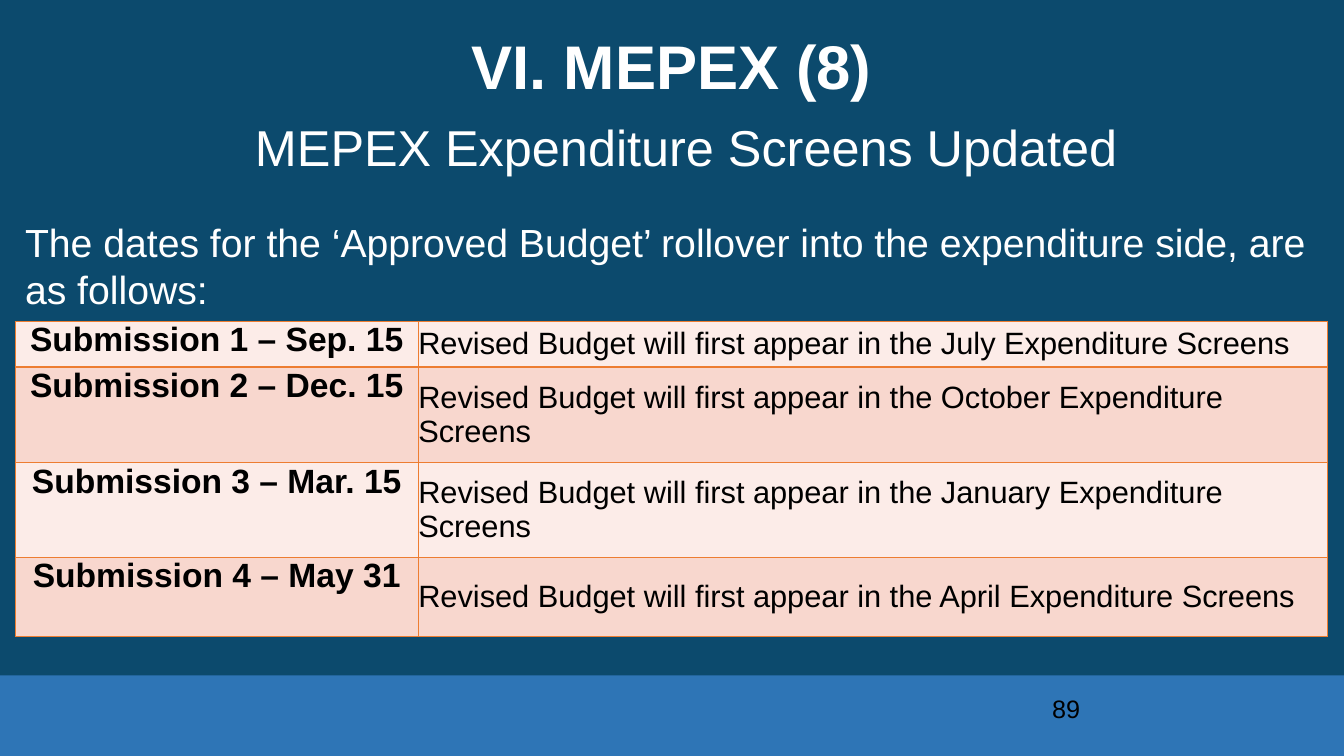
from lxml import etree
from pptx import Presentation
from pptx import util as u
from pptx.dml.color import RGBColor
from pptx.enum import shapes, text
from pptx.oxml.ns import qn

Pt = u.Pt
COLORS = {
    "background": "0C4A6D",
    "footer": "2E75B6",
    "border": "ED7D31",
    "light": "FCECE8",
    "dark": "F8D7CE",
    "white": "FFFFFF",
    "black": "000000",
}
SUBMISSIONS = [
    ("Submission 1 – Sep. 15", "July", 32.4),
    ("Submission 2 – Dec. 15", "October", 68.4),
    ("Submission 3 – Mar. 15", "January", 67.7),
    ("Submission 4 – May 31", "April", 56.2),
]


def rgb(name):
    return RGBColor.from_string(COLORS[name])


def write(tf, content, size, color, bold=False, align=text.PP_ALIGN.LEFT):
    tf.word_wrap = True
    p = tf.paragraphs[0]
    p.text = content
    p.alignment = align
    p.font.name = "Arial"
    p.font.size = Pt(size)
    p.font.bold = bold
    p.font.color.rgb = rgb(color)
    return p


def add_text(s, box, content, size, color, **style):
    sp = s.shapes.add_textbox(*map(Pt, box))
    write(sp.text_frame, content, size, color, **style)
    return sp


def set_title(s, box, content):
    sp = s.shapes.title
    sp.left, sp.top, sp.width, sp.height = map(Pt, box)
    tf = sp.text_frame
    tf.vertical_anchor = text.MSO_ANCHOR.MIDDLE
    p = write(tf, content, 36, "white", align=text.PP_ALIGN.CENTER)
    p.line_spacing = 0.9


def add_footer(s, box):
    sp = s.shapes.add_shape(shapes.MSO_SHAPE.RECTANGLE, *map(Pt, box))
    sp.shadow.inherit = False
    sp.fill.solid()
    sp.fill.fore_color.rgb = rgb("footer")
    sp.line.fill.background()


def set_borders(cell):
    props = cell._tc.get_or_add_tcPr()
    for i, side in enumerate(("lnL", "lnR", "lnT", "lnB")):
        ln = etree.Element(qn(f"a:{side}"), w=str(Pt(1)))
        fill = etree.SubElement(ln, qn("a:solidFill"))
        etree.SubElement(fill, qn("a:srgbClr"), val=COLORS["border"])
        props.insert(i, ln)


def fill_cell(cell, content, size, fill, anchor, **style):
    cell.margin_left = cell.margin_right = 0
    cell.margin_top = cell.margin_bottom = 0
    cell.vertical_anchor = anchor
    cell.fill.solid()
    cell.fill.fore_color.rgb = rgb(fill)
    set_borders(cell)
    write(cell.text_frame, content, size, "black", **style)


def add_schedule(s, box):
    table = s.shapes.add_table(len(SUBMISSIONS), 2, *map(Pt, box)).table
    table.first_row = table.horz_banding = False
    table.columns[0].width = Pt(288)
    table.columns[1].width = Pt(box[2] - 288)
    for i, (deadline, month, height) in enumerate(SUBMISSIONS):
        table.rows[i].height = Pt(height)
        band = "dark" if i % 2 else "light"
        fill_cell(table.cell(i, 0), deadline, 24, band, text.MSO_ANCHOR.TOP,
                  bold=True, align=text.PP_ALIGN.CENTER)
        screens = f"Revised Budget will first appear in the {month} Expenditure Screens"
        fill_cell(table.cell(i, 1), screens, 22, band, text.MSO_ANCHOR.MIDDLE)


def main():
    prs = Presentation()
    prs.slide_width, prs.slide_height = Pt(960), Pt(540)
    s = prs.slides.add_slide(prs.slide_layouts[5])
    s.background.fill.solid()
    s.background.fill.fore_color.rgb = rgb("background")
    add_footer(s, (0, 482.4, 960, 57.6))
    heading = add_text(s, (120, -14.4, 720, 121.7), "VI. MEPEX (8)", 44, "white",
                       bold=True, align=text.PP_ALIGN.CENTER)
    heading.text_frame.vertical_anchor = text.MSO_ANCHOR.MIDDLE
    set_title(s, (130.3, 62.6, 720, 90), "MEPEX Expenditure Screens Updated")
    add_text(s, (10.8, 152.6, 937.4, 74.9),
             "The dates for the ‘Approved Budget’ rollover into the expenditure side, "
             "are as follows:", 28, "white")
    add_schedule(s, (10.8, 229.7, 937.4, 224.7))
    add_text(s, (744.5, 491.8, 175.7, 36), "89", 18, "black")
    prs.save("out.pptx")


if __name__ == "__main__":
    main()
